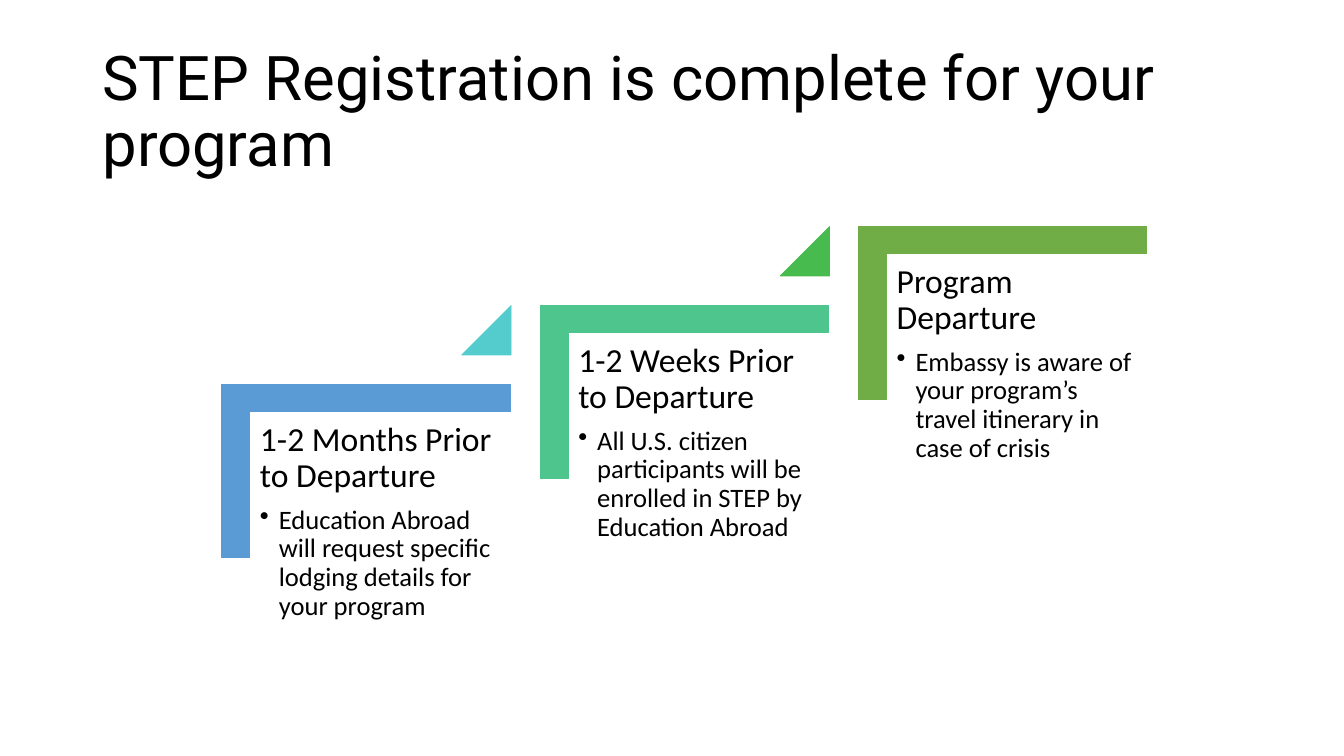
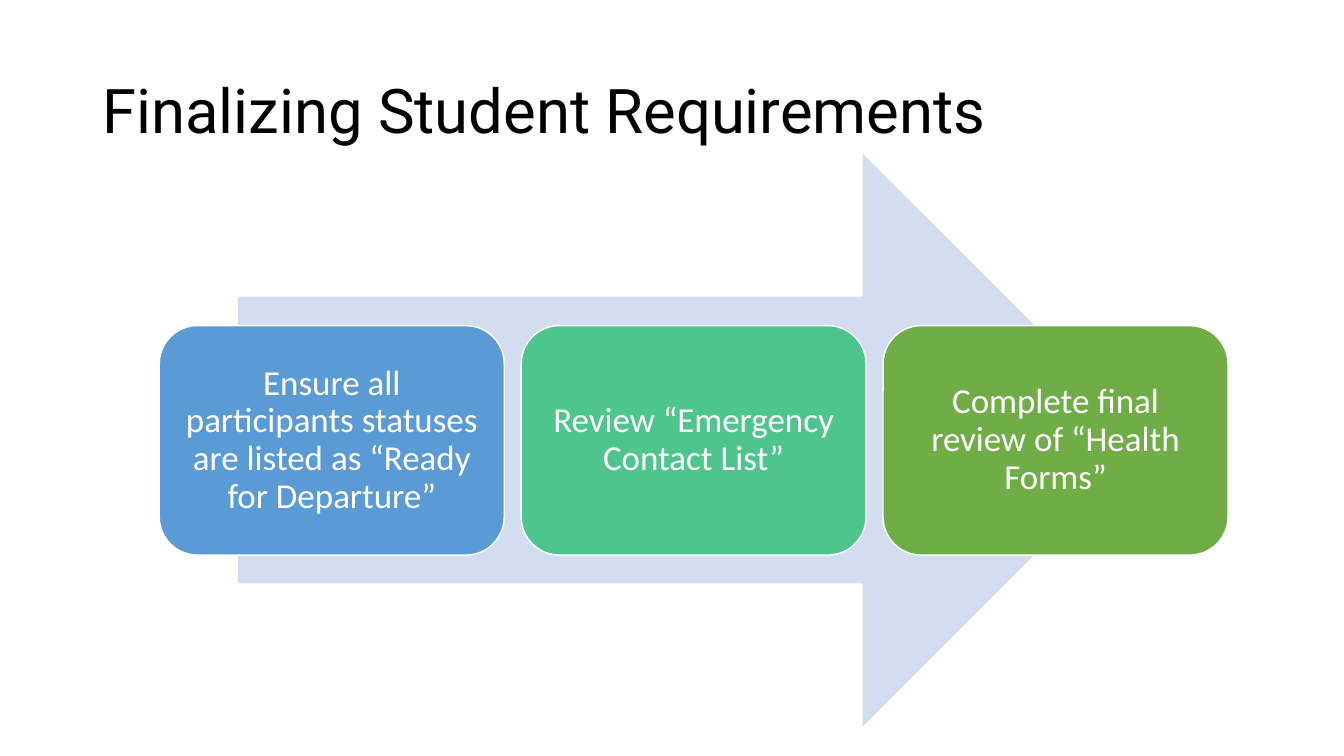
from dataclasses import dataclass

from lxml.etree import SubElement
from pptx import Presentation
from pptx.dml.color import RGBColor
from pptx.enum.shapes import MSO_SHAPE as Preset
from pptx.enum.text import MSO_ANCHOR as Anchor, MSO_AUTO_SIZE as AutoSize, PP_ALIGN as Align
from pptx.oxml.ns import qn
from pptx.util import Pt

COLORS = {
    "black": "000000",
    "white": "FFFFFF",
    "blue": "5B9BD5",
    "teal": "54CCCD",
    "mint": "4DC58D",
    "leaf": "48BB4F",
    "olive": "70AD47",
    "pale": "D2DEEF",
}
TITLE_FONT, BODY_FONT = "Roboto", "Calibri"
INSET = 7.2


@dataclass
class Box:
    left: float
    top: float
    width: float
    height: float

    def moved(self, right: float, down: float) -> "Box":
        return Box(self.left + right, self.top + down, self.width, self.height)

    def lengths(self) -> tuple:
        return Pt(self.left), Pt(self.top), Pt(self.width), Pt(self.height)


@dataclass
class Step:
    heading: str
    detail: str
    color: str
    marker_color: str = ""


@dataclass
class Task:
    text: str
    color: str


STEPS = [
    Step("1-2 Months Prior to Departure",
         "Education Abroad will request specific lodging details for your program",
         "blue", "teal"),
    Step("1-2 Weeks Prior to Departure",
         "All U.S. citizen participants will be enrolled in STEP by Education Abroad",
         "mint", "leaf"),
    Step("Program Departure",
         "Embassy is aware of your program’s travel itinerary in case of crisis",
         "olive"),
]
TASKS = [
    Task("Ensure all participants statuses are listed as “Ready for Departure”", "blue"),
    Task("Review “Emergency Contact List”", "mint"),
    Task("Complete final review of “Health Forms”", "olive"),
]

TITLE_BOX = Box(66, 28.8, 828, 104.4)
CORNER_BOX = Box(199.4, 233.3, 123.9, 205.9)
STEP_TEXT_BOX = Box(178.6, 294.5, 185.8, 162.7)
MARKER_BOX = Box(329.8, 218.2, 35.3, 35.3)
STEP_RIGHT, STEP_DOWN = 227.4, -56.4
ARROW_BOX = Box(170, 109.5, 651, 409.7)
TASK_BOX = Box(113.8, 232.6, 246.4, 163.9)
TASK_PITCH = 258.5


def rgb(name: str) -> RGBColor:
    return RGBColor.from_string(COLORS[name])


def format_paragraph(paragraph, size: float, color: str = "black", font: str = BODY_FONT,
                     align: Align = Align.LEFT) -> None:
    paragraph.alignment = align
    paragraph.line_spacing = 0.9
    paragraph.font.size = Pt(size)
    paragraph.font.name = font
    paragraph.font.color.rgb = rgb(color)


def format_frame(frame, anchor: Anchor) -> None:
    frame.word_wrap = True
    frame.auto_size = AutoSize.NONE
    frame.vertical_anchor = anchor
    frame.margin_left = frame.margin_right = Pt(INSET)
    frame.margin_top = frame.margin_bottom = Pt(INSET)


def add_bullet(paragraph, indent: float) -> None:
    properties = paragraph._p.get_or_add_pPr()
    properties.set("marL", str(Pt(indent)))
    properties.set("indent", str(-Pt(indent)))
    SubElement(properties, qn("a:buChar")).set("char", "•")


def add_titled_slide(presentation, title_text: str):
    slide = presentation.slides.add_slide(presentation.slide_layouts[5])
    title = slide.shapes.title
    title.left, title.top, title.width, title.height = TITLE_BOX.lengths()
    title.text = title_text
    format_frame(title.text_frame, Anchor.MIDDLE)
    format_paragraph(title.text_frame.paragraphs[0], 44, font=TITLE_FONT)
    return slide


def add_preset(slide, preset: Preset, box: Box, fill: str, line: str = "",
               line_width: float = 0.5):
    """Add a flat filled shape, outlined only when a line colour is given."""
    shape = slide.shapes.add_shape(preset, *box.lengths())
    shape.shadow.inherit = False
    shape.fill.solid()
    shape.fill.fore_color.rgb = rgb(fill)
    if line:
        shape.line.color.rgb = rgb(line)
        shape.line.width = Pt(line_width)
    else:
        shape.line.fill.background()
    return shape


def add_step(slide, step: Step, right: float, down: float) -> None:
    corner = add_preset(slide, Preset.CORNER, CORNER_BOX.moved(right, down),
                        step.color, step.color)
    corner.rotation = 90
    corner.adjustments[0] = corner.adjustments[1] = 0.16

    text_box = slide.shapes.add_textbox(*STEP_TEXT_BOX.moved(right, down).lengths())
    frame = text_box.text_frame
    format_frame(frame, Anchor.TOP)
    heading = frame.paragraphs[0]
    heading.text = step.heading
    heading.space_after = Pt(8)
    format_paragraph(heading, 24)
    detail = frame.add_paragraph()
    detail.text = step.detail
    add_bullet(detail, 13.5)
    format_paragraph(detail, 19)

    if step.marker_color:
        marker = add_preset(slide, Preset.ISOSCELES_TRIANGLE, MARKER_BOX.moved(right, down),
                            step.marker_color, step.marker_color)
        marker.adjustments[0] = 1


def add_task(slide, task: Task, box: Box) -> None:
    card = add_preset(slide, Preset.ROUNDED_RECTANGLE, box, task.color, "white", 1)
    format_frame(card.text_frame, Anchor.MIDDLE)
    paragraph = card.text_frame.paragraphs[0]
    paragraph.text = task.text
    format_paragraph(paragraph, 25, "white", align=Align.CENTER)


def build_registration_slide(presentation) -> None:
    slide = add_titled_slide(presentation, "STEP Registration is complete for your program")
    for index, step in enumerate(STEPS):
        add_step(slide, step, index * STEP_RIGHT, index * STEP_DOWN)


def build_requirements_slide(presentation) -> None:
    slide = add_titled_slide(presentation, "Finalizing Student Requirements")
    add_preset(slide, Preset.RIGHT_ARROW, ARROW_BOX, "pale")
    for index, task in enumerate(TASKS):
        add_task(slide, task, TASK_BOX.moved(index * TASK_PITCH, 0))


def main() -> None:
    presentation = Presentation()
    presentation.slide_width, presentation.slide_height = Pt(960), Pt(540)
    build_registration_slide(presentation)
    build_requirements_slide(presentation)
    presentation.save("out.pptx")


if __name__ == "__main__":
    main()
